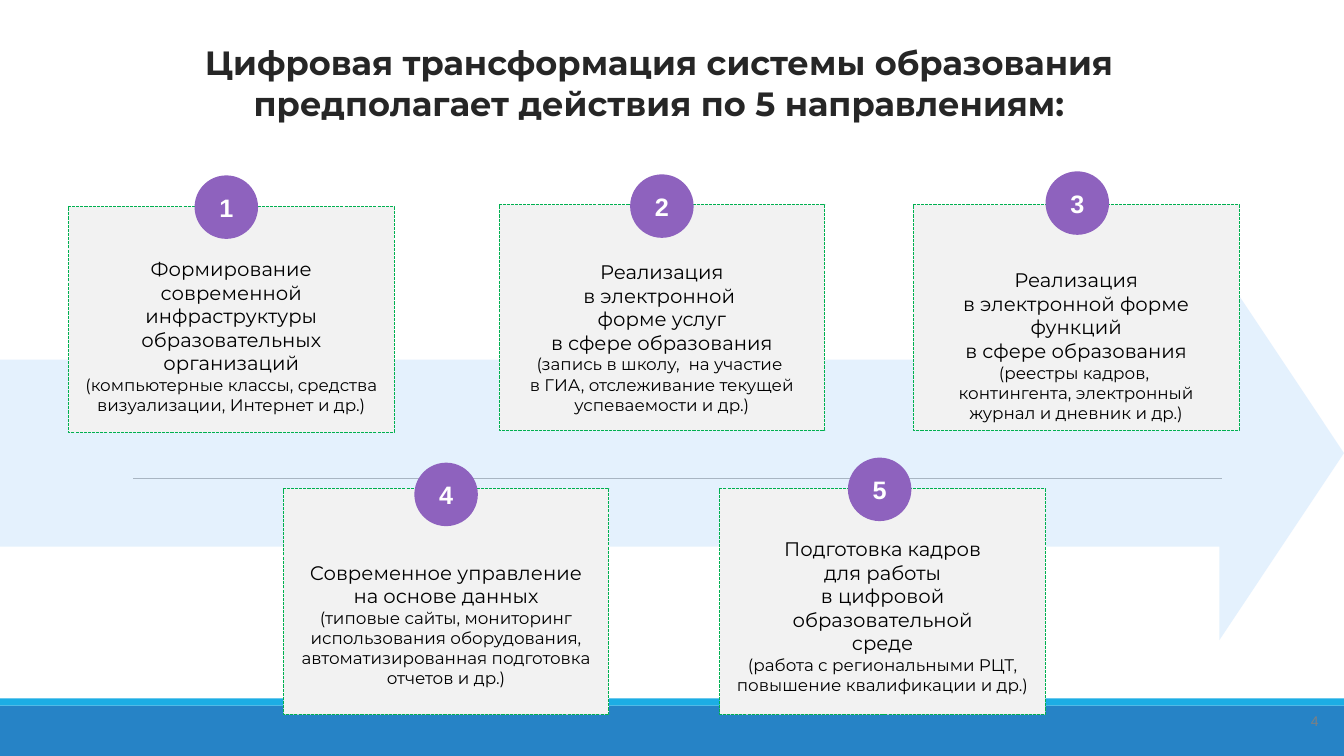
from dataclasses import dataclass

from lxml.etree import SubElement
from pptx import Presentation
from pptx.dml.color import RGBColor
from pptx.enum.dml import MSO_LINE
from pptx.enum.shapes import MSO_CONNECTOR, MSO_SHAPE
from pptx.enum.text import MSO_ANCHOR, MSO_AUTO_SIZE, PP_ALIGN
from pptx.oxml.ns import qn
from pptx.shapes.autoshape import Shape
from pptx.slide import Slide
from pptx.text.text import TextFrame
from pptx.util import Inches, Pt


@dataclass(frozen=True)
class Theme:
    text_font: str = "Montserrat"
    number_font: str = "Arial"
    title_size: float = 24
    badge_size: float = 18
    heading_size: float = 14
    detail_size: float = 12
    page_number_size: float = 10
    title: str = "262626"
    text: str = "000000"
    white: str = "FFFFFF"
    gray: str = "808080"
    footer: str = "2683C6"
    stripe: str = "1CADE4"
    arrow: str = "CCE5FD"
    card: str = "F2F2F2"
    border: str = "00B050"
    badge: str = "8E62BE"


@dataclass(frozen=True)
class Direction:
    left: float
    top: float
    text_top: float
    text_height: float
    badge_left: float
    badge_top: float
    heading: str
    detail: str


THEME = Theme()
SLIDE_WIDTH, SLIDE_HEIGHT = 13.33, 7.5
CARD_WIDTH, CARD_HEIGHT = 3.23, 2.24
BADGE_SIDE = 0.63
TITLE = "Цифровая трансформация системы образования предполагает действия по 5 направлениям:"

DIRECTIONS = [
    Direction(0.68, 2.05, 2.48, 1.74, 1.93, 1.74,
              "Формирование современной инфраструктуры образовательных организаций",
              "(компьютерные классы, средства визуализации, Интернет и др.)"),
    Direction(4.95, 2.03, 2.51, 1.68, 6.25, 1.73,
              "Реализация\nв электронной \nформе услуг\nв сфере образования",
              "(запись в школу,  на участие \nв ГИА, отслеживание текущей успеваемости и др.)"),
    Direction(9.06, 2.03, 2.59, 1.68, 10.37, 1.7,
              "Реализация\nв электронной форме функций\nв сфере образования",
              "(реестры кадров, \nконтингента, электронный журнал и дневник и др.)"),
    Direction(2.81, 4.85, 5.49, 1.41, 4.11, 4.59,
              "Современное управление\nна основе данных",
              "(типовые сайты, мониторинг использования оборудования, "
              "автоматизированная подготовка отчетов и др.)"),
    Direction(7.14, 4.85, 5.26, 1.72, 8.41, 4.54,
              "Подготовка кадров\nдля работы\nв цифровой образовательной\nсреде",
              "(работа с региональными РЦТ, повышение квалификации и др.)"),
]


def prepare_frame(frame: TextFrame, side: float = 0.13, edge: float = 0.07,
                  anchor: MSO_ANCHOR = MSO_ANCHOR.TOP) -> None:
    frame.word_wrap = True
    frame.auto_size = MSO_AUTO_SIZE.NONE
    frame.vertical_anchor = anchor
    frame.margin_left = frame.margin_right = Inches(side)
    frame.margin_top = frame.margin_bottom = Inches(edge)


def write_text(frame: TextFrame, text: str, *, size: float, color: str = THEME.text,
               font: str = THEME.text_font, bold: bool = False) -> None:
    """Fill the empty first paragraph, or append a new one."""
    para = frame.add_paragraph() if frame.text else frame.paragraphs[0]
    para.text = text
    para.alignment = PP_ALIGN.CENTER
    for span in para.runs:
        span.font.name = font
        span.font.size = Pt(size)
        span.font.bold = bold
        span.font.color.rgb = RGBColor.from_string(color)
    # A line break needs its own size, or it stretches the line.
    for line_break in para._p.findall(qn("a:br")):
        SubElement(line_break, qn("a:rPr"), sz=str(int(size * 100)))


def add_filled_shape(page: Slide, kind: MSO_SHAPE, left: float, top: float,
                     width: float, height: float, color: str) -> Shape:
    shape = page.shapes.add_shape(kind, Inches(left), Inches(top), Inches(width), Inches(height))
    shape.shadow.inherit = False
    shape.fill.solid()
    shape.fill.fore_color.rgb = RGBColor.from_string(color)
    shape.line.fill.background()
    return shape


def add_text_frame(page: Slide, left: float, top: float, width: float, height: float) -> TextFrame:
    box = page.shapes.add_textbox(Inches(left), Inches(top), Inches(width), Inches(height))
    prepare_frame(box.text_frame)
    return box.text_frame


def add_background(page: Slide) -> None:
    add_filled_shape(page, MSO_SHAPE.RECTANGLE, 0, 7, SLIDE_WIDTH, 0.5, THEME.footer)
    add_filled_shape(page, MSO_SHAPE.RECTANGLE, 0, 6.93, SLIDE_WIDTH, 0.07, THEME.stripe)
    rule = page.shapes.add_connector(MSO_CONNECTOR.STRAIGHT, Inches(1.32), Inches(4.75),
                                     Inches(12.12), Inches(4.75))
    rule.line.color.rgb = RGBColor.from_string(THEME.gray)
    rule.line.width = Pt(0.5)
    SubElement(rule._element.spPr, qn("a:effectLst"))

    arrow = add_filled_shape(page, MSO_SHAPE.RIGHT_ARROW, 0, 2.64, SLIDE_WIDTH, 3.71, THEME.arrow)
    arrow.adjustments[0] = 0.5
    arrow.adjustments[1] = 0.333
    arrow_color = arrow._element.spPr.find(qn("a:solidFill")).find(qn("a:srgbClr"))
    SubElement(arrow_color, qn("a:alpha"), val="53000")


def add_title(page: Slide) -> None:
    title = page.shapes.title
    title.left, title.top = Inches(0.92), Inches(0.42)
    title.width, title.height = Inches(11.23), Inches(0.41)
    prepare_frame(title.text_frame, side=0, edge=0)
    write_text(title.text_frame, TITLE, size=THEME.title_size, color=THEME.title, bold=True)


def add_card(page: Slide, direction: Direction) -> None:
    card = add_filled_shape(page, MSO_SHAPE.RECTANGLE, direction.left, direction.top,
                            CARD_WIDTH, CARD_HEIGHT, THEME.card)
    card.line.color.rgb = RGBColor.from_string(THEME.border)
    card.line.width = Pt(0.75)
    card.line.dash_style = MSO_LINE.SQUARE_DOT


def add_description(page: Slide, direction: Direction) -> None:
    frame = add_text_frame(page, direction.left, direction.text_top,
                           CARD_WIDTH, direction.text_height)
    write_text(frame, direction.heading, size=THEME.heading_size)
    write_text(frame, direction.detail, size=THEME.detail_size)


def add_badge(page: Slide, direction: Direction, number: int) -> None:
    badge = add_filled_shape(page, MSO_SHAPE.OVAL, direction.badge_left, direction.badge_top,
                             BADGE_SIDE, BADGE_SIDE, THEME.badge)
    prepare_frame(badge.text_frame, anchor=MSO_ANCHOR.MIDDLE)
    write_text(badge.text_frame, str(number), size=THEME.badge_size, color=THEME.white,
               font=THEME.number_font, bold=True)


def main() -> None:
    deck = Presentation()
    deck.slide_width, deck.slide_height = Inches(SLIDE_WIDTH), Inches(SLIDE_HEIGHT)
    page = deck.slides.add_slide(deck.slide_layouts.get_by_name("Title Only"))
    add_background(page)
    add_title(page)
    for direction in DIRECTIONS:
        add_card(page, direction)
    for number, direction in enumerate(DIRECTIONS, start=1):
        add_description(page, direction)
        add_badge(page, direction, number)
    page_number = add_text_frame(page, 12.79, 7, 0.5, 0.3)
    write_text(page_number, "4", size=THEME.page_number_size, color=THEME.gray,
               font=THEME.number_font)
    deck.save("out.pptx")


if __name__ == "__main__":
    main()
